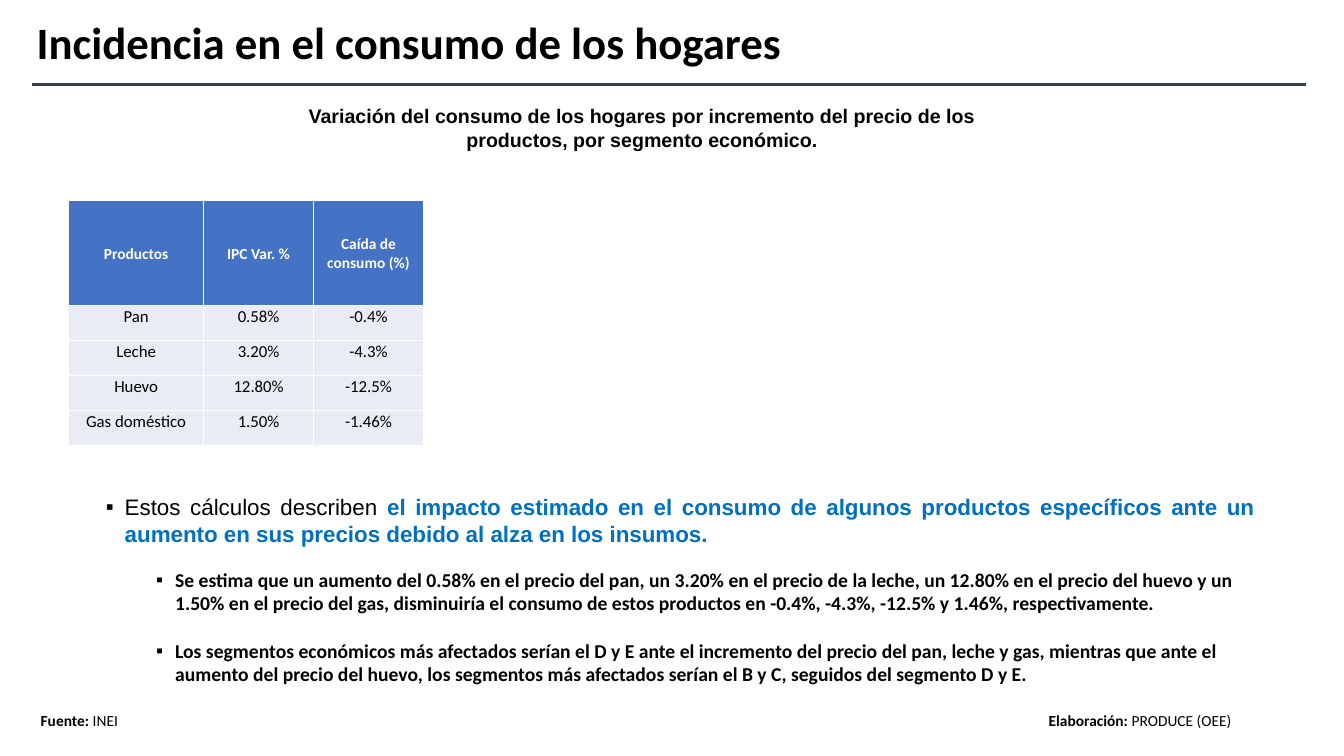
from dataclasses import dataclass

from lxml import etree
from pptx import Presentation
from pptx.dml.color import RGBColor
from pptx.enum.shapes import MSO_CONNECTOR
from pptx.enum.text import MSO_ANCHOR, MSO_AUTO_SIZE, PP_ALIGN
from pptx.oxml.ns import qn
from pptx.util import Pt

CENTER, LEFT, JUSTIFY = PP_ALIGN.CENTER, PP_ALIGN.LEFT, PP_ALIGN.JUSTIFY
MIDDLE, TOP = MSO_ANCHOR.MIDDLE, MSO_ANCHOR.TOP
NO_AUTOFIT = MSO_AUTO_SIZE.NONE
STRAIGHT = MSO_CONNECTOR.STRAIGHT


@dataclass(frozen=True)
class Theme:
    black: RGBColor = RGBColor(0x00, 0x00, 0x00)
    white: RGBColor = RGBColor(0xFF, 0xFF, 0xFF)
    rule: RGBColor = RGBColor(0x33, 0x3F, 0x50)
    emphasis: RGBColor = RGBColor(0x00, 0x70, 0xC0)
    header: RGBColor = RGBColor(0x44, 0x72, 0xC4)
    row: RGBColor = RGBColor(0xE9, 0xEB, 0xF5)
    heading_font: str = "Arial"
    body_font: str = "Calibri"
    title: int = 32
    lead: int = 16
    body: int = 14
    cell: int = 12
    small: int = 11


THEME = Theme()


def style(font, name, size, color=THEME.black, bold=None):
    font.name, font.size, font.bold = name, Pt(size), bold
    font.color.rgb = color


def add_bullet(paragraph, left):
    """Hang a square bullet before text that starts `left` points in."""
    properties = paragraph._p.get_or_add_pPr()
    properties.set("marL", str(Pt(left)))
    properties.set("indent", str(-Pt(13.5)))
    etree.SubElement(properties, qn("a:buFont")).set("typeface", THEME.heading_font)
    etree.SubElement(properties, qn("a:buChar")).set("char", "▪")


deck = Presentation()
deck.slide_width, deck.slide_height = Pt(960), Pt(540)
slide = deck.slides.add_slide(deck.slide_layouts[5])
shapes = slide.shapes

# Title and rule
title = shapes.title
title.left, title.top, title.width, title.height = Pt(19), Pt(7), Pt(743), Pt(46)
title.text_frame.text = "Incidencia en el consumo de los hogares"
title.text_frame.auto_size = NO_AUTOFIT
title.text_frame.vertical_anchor = TOP
heading = title.text_frame.paragraphs[0]
heading.alignment = LEFT
style(heading.font, THEME.body_font, THEME.title, bold=True)

rule = shapes.add_connector(STRAIGHT, Pt(23), Pt(60.5), Pt(933), Pt(60.5))
rule.line.color.rgb = THEME.rule
rule.line.width = Pt(2)
etree.SubElement(rule._element.spPr, qn("a:effectLst"))

# Table heading
caption = shapes.add_textbox(Pt(183), Pt(71), Pt(551.5), Pt(41)).text_frame
caption.word_wrap = True
caption.text = ("Variación del consumo de los hogares por incremento del precio "
                "de los productos, por segmento económico.")
caption.paragraphs[0].alignment = CENTER
style(caption.paragraphs[0].font, THEME.heading_font, THEME.body, bold=True)

# Price and consumption table
price_rows = [
    ("Productos", "IPC Var. %", "Caída de consumo (%)"),
    ("Pan", "0.58%", "-0.4%"),
    ("Leche", "3.20%", "-4.3%"),
    ("Huevo", "12.80%", "-12.5%"),
    ("Gas doméstico", "1.50%", "-1.46%"),
]
column_widths = (96.5, 78.5, 78.5)
header_height, row_height = 75, 25
prices = shapes.add_table(len(price_rows), len(column_widths), Pt(49), Pt(143.5),
                          Pt(sum(column_widths)), Pt(header_height + 4 * row_height)).table
prices.horz_banding = False
for column, width in zip(prices.columns, column_widths):
    column.width = Pt(width)
for r, values in enumerate(price_rows):
    is_header = r == 0
    prices.rows[r].height = Pt(header_height if is_header else row_height)
    for c, value in enumerate(values):
        cell = prices.cell(r, c)
        cell.text = value
        cell.margin_left = cell.margin_right = cell.margin_top = Pt(0.7)
        cell.margin_bottom = 0
        cell.vertical_anchor = MIDDLE if is_header else TOP
        cell.fill.solid()
        cell.fill.fore_color.rgb = THEME.header if is_header else THEME.row
        paragraph = cell.text_frame.paragraphs[0]
        paragraph.alignment = CENTER
        style(paragraph.font, THEME.body_font,
              THEME.small if is_header else THEME.cell,
              THEME.white if is_header else THEME.black, is_header)

# Findings
findings = shapes.add_textbox(Pt(68.5), Pt(349), Pt(835), Pt(145.5)).text_frame
findings.word_wrap = True
lead = findings.paragraphs[0]
lead.alignment = JUSTIFY
style(lead.font, THEME.heading_font, THEME.lead)
lead.add_run().text = "Estos cálculos describen "
impact = lead.add_run()
impact.text = ("el impacto estimado en el consumo de algunos productos específicos "
               "ante un aumento en sus precios debido al alza en los insumos.")
impact.font.bold = True
impact.font.color.rgb = THEME.emphasis
add_bullet(lead, 13.5)

details = [
    (14.5, "Se estima que un aumento del 0.58% en el precio del pan, un 3.20% en el "
           "precio de la leche, un 12.80% en el precio del huevo y un 1.50% en el precio "
           "del gas, disminuiría el consumo de estos productos en -0.4%, -4.3%, -12.5% "
           "y 1.46%, respectivamente."),
    (17, "Los segmentos económicos más afectados serían el D y E ante el incremento del "
         "precio del pan, leche y gas, mientras que ante el aumento del precio del huevo, "
         "los segmentos más afectados serían el B y C, seguidos del segmento D y E."),
]
for gap, sentence in details:
    detail = findings.add_paragraph()
    detail.text = sentence
    detail.level = 1
    detail.space_before = Pt(gap)
    style(detail.font, THEME.body_font, THEME.body, bold=True)
    add_bullet(detail, 49.5)

# Source and author, the second at a tab stop
credits = shapes.add_textbox(Pt(22), Pt(504.5), Pt(928), Pt(21)).text_frame
credits.word_wrap = True
credit_line = credits.paragraphs[0]
style(credit_line.font, THEME.body_font, THEME.small)
for words, bold in (("Fuente: ", True), ("INEI\t", False),
                    ("Elaboración: ", True), ("PRODUCE (OEE)", False)):
    run = credit_line.add_run()
    run.text = words
    run.font.bold = bold
tab_stops = etree.Element(qn("a:tabLst"))
etree.SubElement(tab_stops, qn("a:tab"), pos=str(Pt(720)), algn="l")
credit_line._p.get_or_add_pPr().insert(0, tab_stops)

deck.save("out.pptx")
